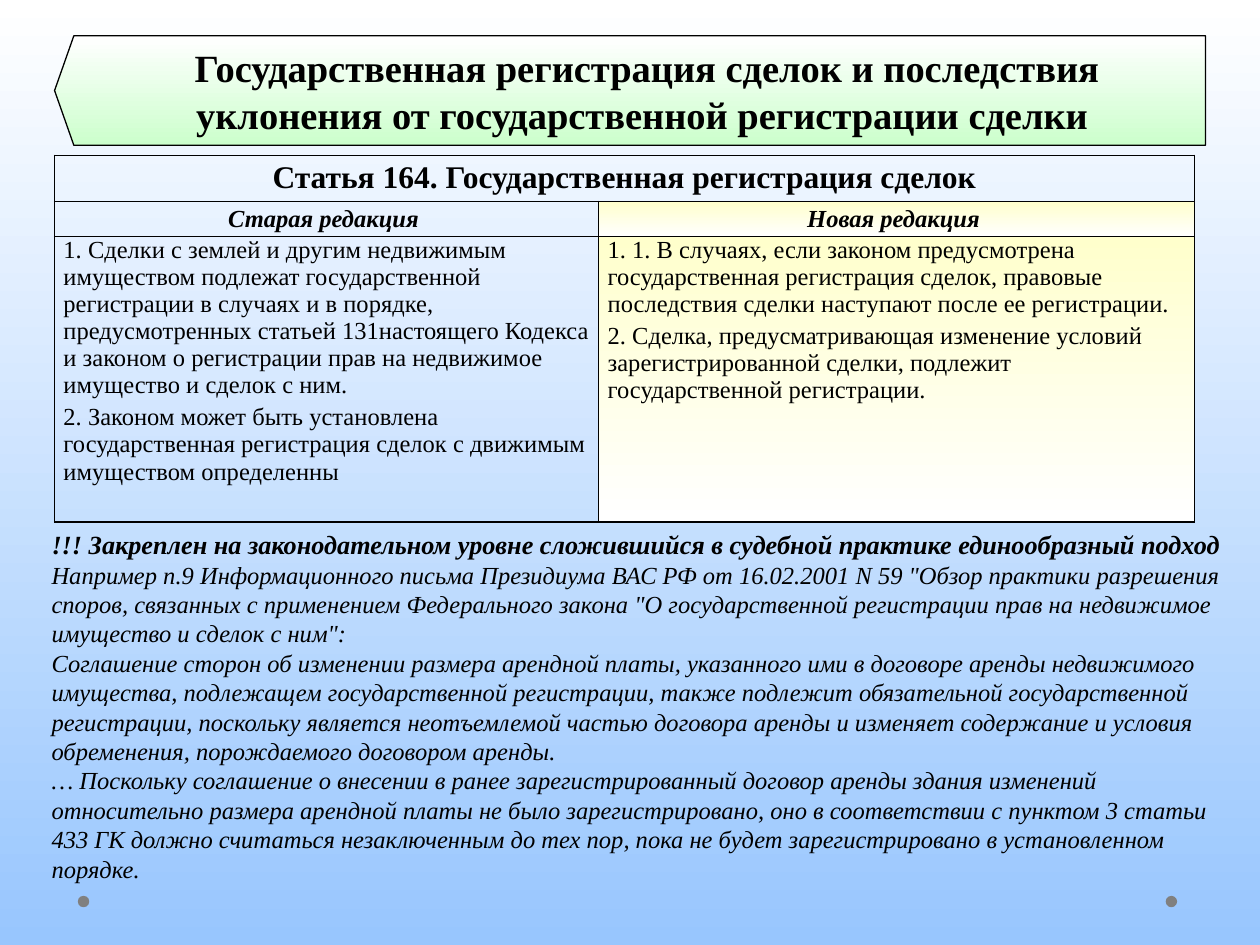
from lxml.etree import SubElement
from pptx import Presentation
from pptx.dml.color import RGBColor
from pptx.enum.shapes import MSO_SHAPE as Shape
from pptx.enum.text import MSO_ANCHOR as Anchor, MSO_AUTO_SIZE as AutoSize, PP_ALIGN as Align
from pptx.oxml.ns import qn
from pptx.util import Cm, Pt

# Content
TITLE = ("Государственная регистрация сделок и последствия "
         "уклонения от государственной регистрации сделки ")
ARTICLE = "Статья 164. Государственная регистрация сделок"
EDITIONS = [
    ("Старая редакция ", [
        "1. Сделки с землей и другим недвижимым имуществом подлежат государственной "
        "регистрации в случаях и в порядке, предусмотренных статьей 131настоящего Кодекса "
        "и законом о регистрации прав на недвижимое имущество и сделок с ним.",
        "2. Законом может быть установлена государственная регистрация сделок "
        "с движимым имуществом определенны",
    ]),
    ("Новая редакция ", [
        "1. 1. В случаях, если законом предусмотрена государственная регистрация сделок, "
        "правовые последствия сделки наступают после ее регистрации.",
        "2. Сделка, предусматривающая изменение условий зарегистрированной сделки, "
        "подлежит государственной регистрации.",
    ]),
]
COMMENTARY = [
    "!!! Закреплен на законодательном уровне сложившийся в судебной практике единообразный подход",
    "Например п.9 Информационного письма Президиума ВАС РФ от 16.02.2001 N 59 \"Обзор практики "
    "разрешения споров, связанных с применением Федерального закона \"О государственной "
    "регистрации прав на недвижимое имущество и сделок с ним\":",
    "Соглашение сторон об изменении размера арендной платы, указанного ими в договоре аренды "
    "недвижимого имущества, подлежащем государственной регистрации, также подлежит обязательной "
    "государственной регистрации, поскольку является неотъемлемой частью договора аренды и "
    "изменяет содержание и условия обременения, порождаемого договором аренды.",
    "… Поскольку соглашение о внесении в ранее зарегистрированный договор аренды здания "
    "изменений относительно размера арендной платы не было зарегистрировано, оно в соответствии "
    "с пунктом 3 статьи 433 ГК должно считаться незаключенным до тех пор, пока не будет "
    "зарегистрировано в установленном порядке.",
]

THEME = {
    "font": "Times New Roman",
    "text": "000000", "line": "000000", "dot": "808080",
    "background": ("FFFFFF", "98C6FE"),
    "banner": ("CCFFCC", "FFFFFF"),
    "new_edition": ("FFFFCC", "FFFFFF"),
    "title": 22, "article": 18, "lead": 15, "body": 14,
}

# Layout in centimetres
LEFT = 1.1
COLUMNS = (10.97, 12.01)
ROWS = (0.93, 0.71, 5.75)
DOT_SIZE, DOT_TOP, DOT_LEFTS = 0.23, 18.06, (1.57, 23.5)


def color(name):
    return RGBColor.from_string(THEME[name])


def fill_gradient(fill, name):
    """Two colours running from top to bottom."""
    fill.gradient()
    fill.gradient_angle = 270
    for stop, value in zip(fill.gradient_stops, THEME[name]):
        stop.color.rgb = RGBColor.from_string(value)


def format_runs(paragraph, size, bold=False, italic=False):
    for run in paragraph.runs:
        font = run.font
        font.name, font.size = THEME["font"], Pt(THEME[size])
        font.bold, font.italic = bold, italic
        font.color.rgb = color("text")


def add_borders(cell):
    properties = cell._tc.get_or_add_tcPr()
    for side in ("a:lnL", "a:lnR", "a:lnT", "a:lnB"):
        line = SubElement(properties, qn(side), w=str(Pt(1)))
        solid = SubElement(line, qn("a:solidFill"))
        SubElement(solid, qn("a:srgbClr"), val=THEME["line"])


def set_heading(cell, text, size, italic=False):
    cell.text_frame.text = text
    paragraph = cell.text_frame.paragraphs[0]
    paragraph.alignment, paragraph.line_spacing = Align.CENTER, 1.15
    format_runs(paragraph, size, bold=True, italic=italic)


def add_dots(slide):
    for left in DOT_LEFTS:
        dot = slide.shapes.add_shape(Shape.OVAL, Cm(left), Cm(DOT_TOP), Cm(DOT_SIZE), Cm(DOT_SIZE))
        dot.shadow.inherit = False
        dot.fill.solid()
        dot.fill.fore_color.rgb = color("dot")
        dot.line.fill.background()


def add_banner(slide):
    banner = slide.shapes.add_shape(Shape.PENTAGON, Cm(LEFT), Cm(0.72), Cm(23.2), Cm(2.21))
    banner.adjustments[0] = 0.176
    banner.rotation = 180
    banner.shadow.inherit = False
    fill_gradient(banner.fill, "banner")
    banner.line.color.rgb = color("line")
    banner.line.width = Pt(0.75)
    frame = banner.text_frame
    frame.word_wrap, frame.vertical_anchor = True, Anchor.MIDDLE
    # Turn the text back upright
    frame._txBody.bodyPr.set("rot", str(180 * 60000))
    frame.text = TITLE
    paragraph = frame.paragraphs[0]
    paragraph.alignment = Align.CENTER
    paragraph._p.get_or_add_pPr().set("marL", str(Cm(0.48)))
    format_runs(paragraph, "title", bold=True)


def add_comparison(slide):
    table = slide.shapes.add_table(len(ROWS), len(COLUMNS), Cm(LEFT), Cm(3.13),
                                   Cm(sum(COLUMNS)), Cm(sum(ROWS))).table
    table.first_row = table.horz_banding = False
    for column, width in zip(table.columns, COLUMNS):
        column.width = Cm(width)
    for row, height in zip(table.rows, ROWS):
        row.height = Cm(height)
    for cell in table.iter_cells():
        cell.margin_left = cell.margin_right = Cm(0.18)
        cell.margin_top = cell.margin_bottom = 0
        add_borders(cell)
        cell.fill.background()

    table.cell(0, 0).merge(table.cell(0, 1))
    set_heading(table.cell(0, 0), ARTICLE, "article")
    for index, (heading, clauses) in enumerate(EDITIONS):
        set_heading(table.cell(1, index), heading, "body", italic=True)
        frame = table.cell(2, index).text_frame
        frame.text = "\n".join(clauses)
        for paragraph in frame.paragraphs:
            paragraph.space_before = Pt(0.2 * THEME["body"])
            format_runs(paragraph, "body")
    for row in (1, 2):
        fill_gradient(table.cell(row, 1).fill, "new_edition")


def add_commentary(slide):
    frame = slide.shapes.add_textbox(Cm(0.79), Cm(10.52), Cm(24.31), Cm(7.39)).text_frame
    frame.word_wrap, frame.auto_size = True, AutoSize.SHAPE_TO_FIT_TEXT
    frame.text = "\n".join(COMMENTARY)
    for index, paragraph in enumerate(frame.paragraphs):
        lead = index == 0
        format_runs(paragraph, "lead" if lead else "body", bold=lead, italic=True)


def main():
    presentation = Presentation()
    presentation.slide_width, presentation.slide_height = Cm(25.4), Cm(19.05)
    slide = presentation.slides.add_slide(presentation.slide_layouts[6])
    fill_gradient(slide.background.fill, "background")
    add_dots(slide)
    add_banner(slide)
    add_comparison(slide)
    add_commentary(slide)
    presentation.save("out.pptx")


if __name__ == "__main__":
    main()
